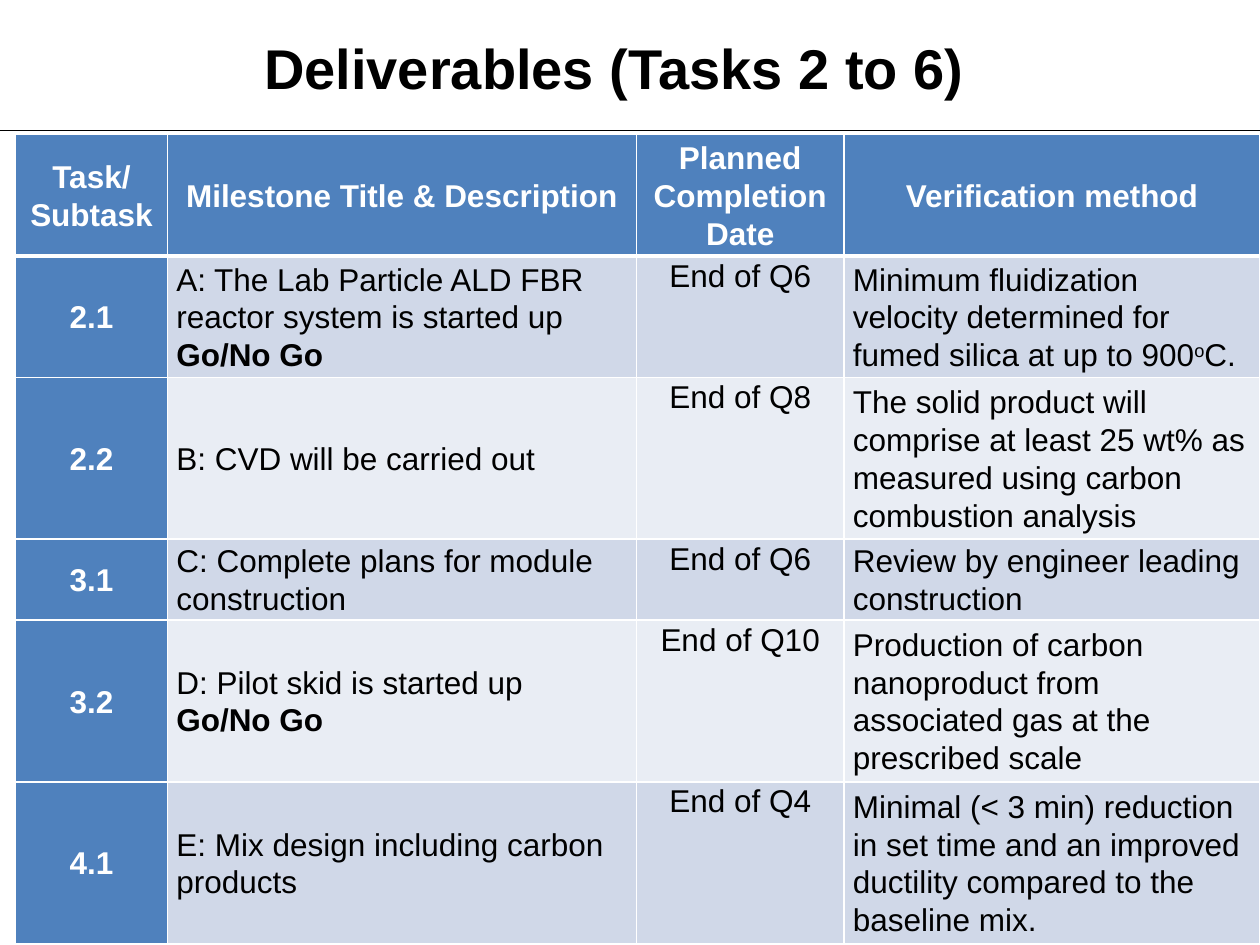
"""Build the deliverables slide with its milestone table."""
from lxml.etree import SubElement
from pptx import Presentation
from pptx.dml.color import RGBColor
from pptx.enum.shapes import MSO_CONNECTOR
from pptx.enum.text import MSO_ANCHOR, MSO_AUTO_SIZE, PP_ALIGN
from pptx.oxml.ns import qn
from pptx.util import Pt


def rgb(value):
    return RGBColor.from_string(value)


def add_text(p, text, size=18, color="000000", bold=False, baseline=0):
    r = p.add_run()
    r.text = text
    r.font.name = "Arial"
    r.font.size = Pt(size)
    r.font.bold = bold
    r.font.color.rgb = rgb(color)
    if baseline:
        r._r.get_or_add_rPr().set("baseline", str(baseline))


prs = Presentation()
prs.slide_width, prs.slide_height = Pt(720), Pt(540)
s = prs.slides.add_slide(prs.slide_layouts[5])

rule = s.shapes.add_connector(MSO_CONNECTOR.STRAIGHT, 0, Pt(74.5), Pt(720), Pt(74.5))
rule.line.color.rgb = rgb("000000")
rule.line.width = Pt(0.72)
SubElement(rule._element.spPr, qn("a:effectLst"))

title = s.shapes.title
title.left, title.top, title.width, title.height = Pt(150), Pt(18), Pt(414), Pt(39.6)
tf = title.text_frame
tf.margin_left = Pt(1)
tf.margin_right = tf.margin_bottom = 0
tf.margin_top = Pt(0.9)
tf.vertical_anchor = MSO_ANCHOR.TOP
tf.auto_size = MSO_AUTO_SIZE.SHAPE_TO_FIT_TEXT
p = tf.paragraphs[0]
p.alignment = PP_ALIGN.LEFT
add_text(p, "Deliverables (Tasks 2 to 6)", size=32, bold=True)

GO = "Go/No Go"
rows = [
    ("Task/\nSubtask", "Milestone Title & Description", "Planned Completion Date",
     "Verification method"),
    ("2.1", "A: The Lab Particle ALD FBR reactor system is started up\n" + GO, "End of Q6",
     "Minimum fluidization velocity determined for fumed silica at up to 900^o^C."),
    ("2.2", "B: CVD will be carried out", "End of Q8",
     "The solid product will comprise at least 25 wt% as measured using carbon "
     "combustion analysis"),
    ("3.1", "C: Complete plans for module construction", "End of Q6",
     "Review by engineer leading construction"),
    ("3.2", "D: Pilot skid is started up\n" + GO, "End of Q10",
     "Production of carbon nanoproduct from associated gas at the prescribed scale"),
    ("4.1", "E: Mix design including carbon products", "End of Q4",
     "Minimal (< 3 min) reduction in set time and an improved ductility compared "
     "to the baseline mix."),
]
widths = [87, 267.8, 118.8, 237.6]
heights = [69.2, 69.2, 92.4, 46.2, 92.4, 92.4]

tbl = s.shapes.add_table(len(rows), len(widths), Pt(8.8), Pt(77),
                         Pt(sum(widths)), Pt(sum(heights))).table
for col, width in zip(tbl.columns, widths):
    col.width = Pt(width)
for row, height in zip(tbl.rows, heights):
    row.height = Pt(height)

for i, row in enumerate(rows):
    for j, text in enumerate(row):
        cell = tbl.cell(i, j)
        head = i == 0 or j == 0
        cell.margin_left = cell.margin_right = Pt(5)
        cell.margin_top = cell.margin_bottom = 0
        cell.vertical_anchor = MSO_ANCHOR.MIDDLE if head or j != 2 else MSO_ANCHOR.TOP

        tcPr = cell._tc.get_or_add_tcPr()
        for side in "LRTB":
            thick = (i, side) in ((0, "B"), (1, "T"))
            ln = SubElement(tcPr, qn(f"a:ln{side}"), w=str(Pt(3 if thick else 1)))
            SubElement(SubElement(ln, qn("a:solidFill")), qn("a:srgbClr"), val="FFFFFF")
        cell.fill.solid()
        cell.fill.fore_color.rgb = rgb("4F81BD" if head else "D0D8E8" if i % 2 else "E9EDF4")

        tf = cell.text_frame
        for n, line in enumerate(text.split("\n")):
            p = tf.add_paragraph() if n else tf.paragraphs[0]
            p.alignment = PP_ALIGN.CENTER if head or j == 2 else PP_ALIGN.LEFT
            p.line_spacing = 1.07
            for k, part in enumerate(line.split("^")):
                add_text(p, part, color="FFFFFF" if head else "000000",
                         bold=head or line == GO, baseline=30000 * (k % 2))

prs.save("out.pptx")
